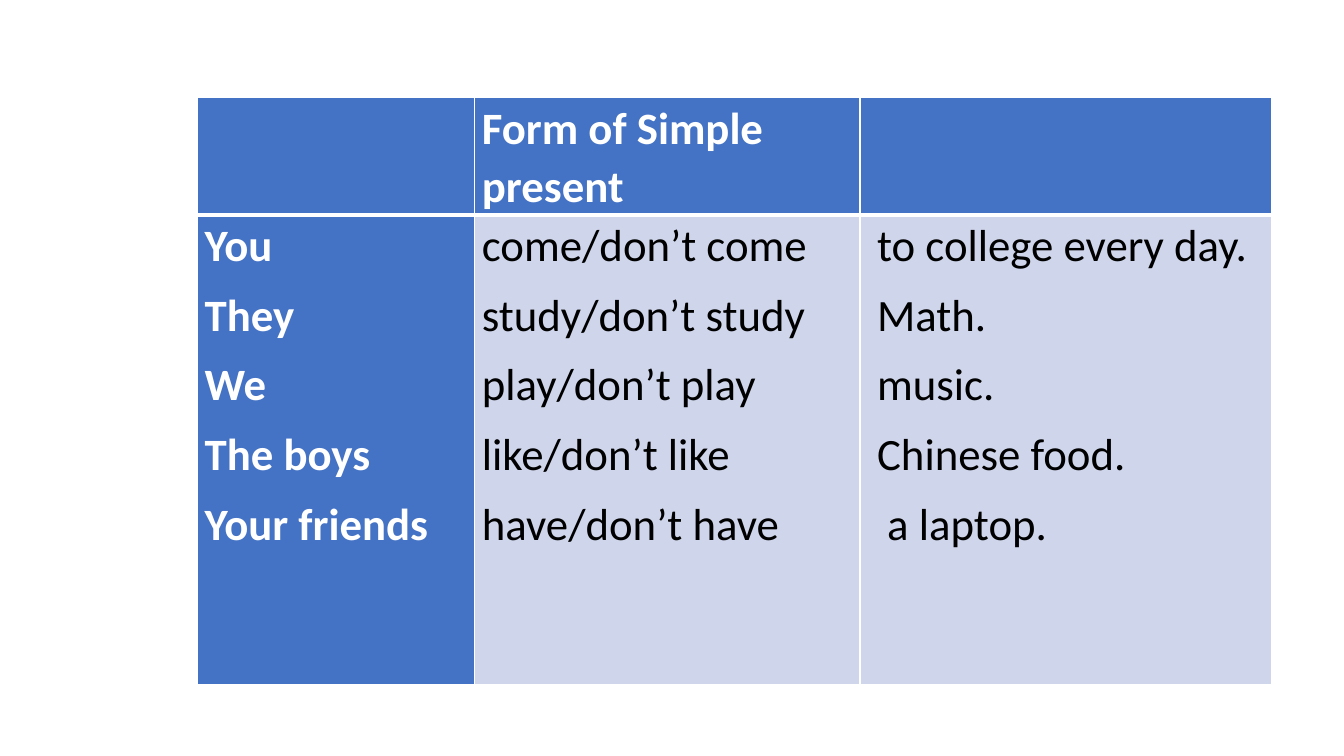
from lxml.etree import SubElement
from pptx import Presentation
from pptx.dml.color import RGBColor
from pptx.oxml.ns import qn
from pptx.util import Inches, Pt

# Content
HEADER = ["", "Form of Simple present", ""]
SENTENCES = [
    ("You", "come/don’t come", "to college every day."),
    ("They", "study/don’t study", "Math."),
    ("We", "play/don’t play", "music."),
    ("The boys", "like/don’t like", "Chinese food."),
    ("Your friends", "have/don’t have", "a laptop."),
]

# Format
BLUE = RGBColor(0x44, 0x72, 0xC4)
PALE = RGBColor(0xCF, 0xD5, 0xEA)
WHITE = RGBColor(0xFF, 0xFF, 0xFF)
BLACK = RGBColor(0, 0, 0)
COLUMN_WIDTHS = [2.75, 3.82, 4.08]
ROW_HEIGHTS = [1.16, 4.66]
LEFT_MARGINS = [0.07, 0.07, 0.17]
LAPTOP_INDENT = Inches(0.1)
PARAGRAPH = {"line_spacing": 1.07, "space_after": Pt(8)}
FONT = {"name": "Calibri", "size": Pt(32)}


def set_format(target, values):
    for key, value in values.items():
        setattr(target, key, value)


def add_borders(cell, row):
    widths = {"a:lnL": 1, "a:lnR": 1,
              "a:lnT": 3 if row else 1, "a:lnB": 1 if row else 3}
    properties = cell._tc.get_or_add_tcPr()
    for side, width in widths.items():
        line = SubElement(properties, qn(side), w=str(Pt(width)))
        fill = SubElement(line, qn("a:solidFill"))
        SubElement(fill, qn("a:srgbClr"), val=str(WHITE))


def fill_cell(cell, lines, row, column):
    is_heading = row == 0 or column == 0
    set_format(cell, {"margin_left": Inches(LEFT_MARGINS[column]),
                      "margin_right": Inches(0.07),
                      "margin_top": 0, "margin_bottom": 0})
    add_borders(cell, row)
    cell.fill.solid()
    cell.fill.fore_color.rgb = BLUE if is_heading else PALE
    cell.text = "\n".join(lines)
    for paragraph in cell.text_frame.paragraphs:
        set_format(paragraph, PARAGRAPH)
        set_format(paragraph.font, FONT)
        for run in paragraph.runs:
            set_format(run.font, {**FONT, "bold": is_heading})
            run.font.color.rgb = WHITE if is_heading else BLACK


prs = Presentation()
prs.slide_width, prs.slide_height = Inches(13.33), Inches(7.5)
slide = prs.slides.add_slide(prs.slide_layouts[6])

# Grammar table: one header row, one row holding a list per column
grammar = slide.shapes.add_table(
    len(ROW_HEIGHTS), len(COLUMN_WIDTHS), Inches(1.96), Inches(0.97),
    Inches(sum(COLUMN_WIDTHS)), Inches(sum(ROW_HEIGHTS))).table
for column, width in zip(grammar.columns, COLUMN_WIDTHS):
    column.width = Inches(width)
for row, height in zip(grammar.rows, ROW_HEIGHTS):
    row.height = Inches(height)

for index, (heading, lines) in enumerate(zip(HEADER, zip(*SENTENCES))):
    fill_cell(grammar.cell(0, index), [heading], 0, index)
    fill_cell(grammar.cell(1, index), lines, 1, index)

# The last ending sits slightly further in
laptop = grammar.cell(1, 2).text_frame.paragraphs[-1]
laptop._p.get_or_add_pPr().set("marL", str(LAPTOP_INDENT))

prs.save("out.pptx")
